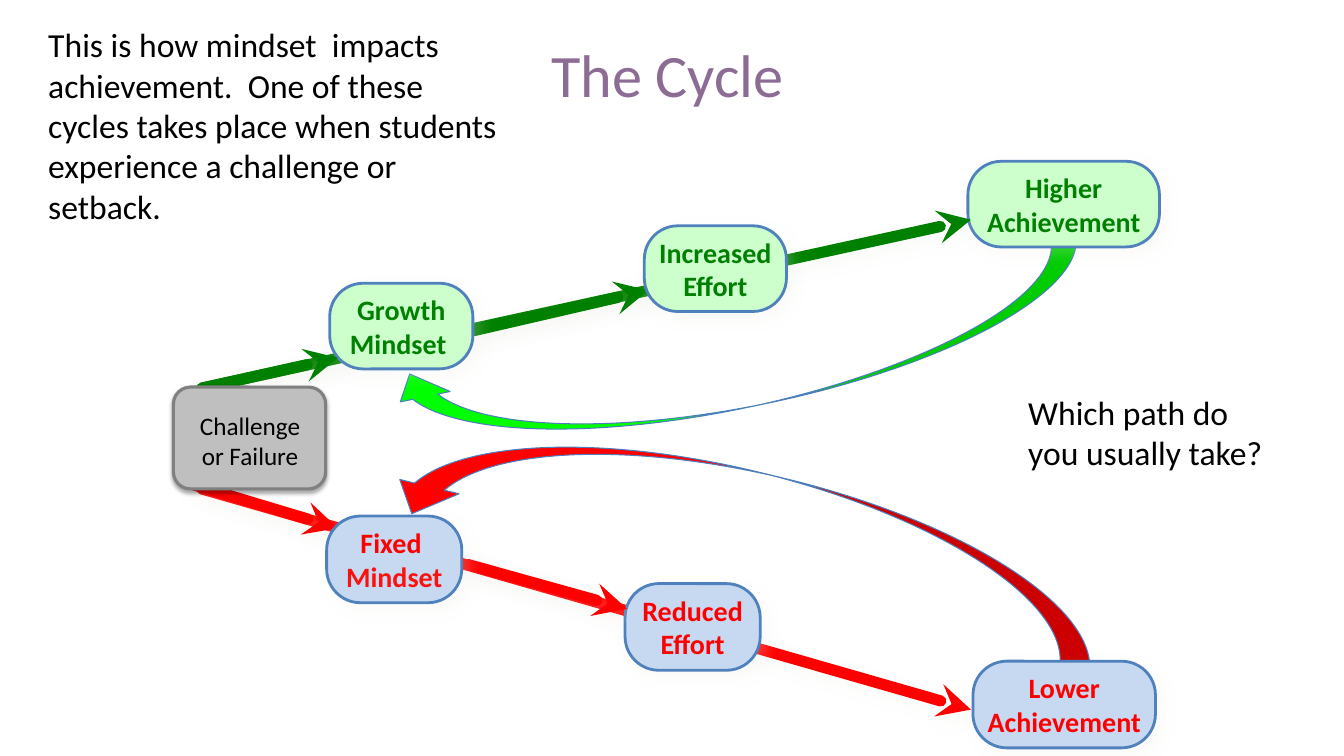
from lxml import etree
from pptx import Presentation
from pptx.dml.color import RGBColor
from pptx.enum.shapes import MSO_CONNECTOR, MSO_SHAPE
from pptx.enum.text import MSO_ANCHOR, PP_ALIGN
from pptx.oxml.ns import qn
from pptx.util import Inches, Pt

ROUND, RECT = MSO_SHAPE.ROUNDED_RECTANGLE, MSO_SHAPE.RECTANGLE
CURVE, LINE = MSO_SHAPE.CURVED_LEFT_ARROW, MSO_CONNECTOR.STRAIGHT
MIDDLE, TOP = MSO_ANCHOR.MIDDLE, MSO_ANCHOR.TOP
CENTER, LEFT = PP_ALIGN.CENTER, PP_ALIGN.LEFT

BLACK = RGBColor(0x00, 0x00, 0x00)
PURPLE = RGBColor(0x8C, 0x6C, 0x94)
RED = RGBColor(0xFF, 0x00, 0x00)
WARM = RGBColor(0xFB, 0x12, 0x0E)
GREEN = RGBColor(0x00, 0x80, 0x00)
LIME = RGBColor(0x00, 0xFF, 0x00)
MINT = RGBColor(0xCC, 0xFF, 0xCC)
SKY = RGBColor(0xC6, 0xD9, 0xF1)
BLUE = RGBColor(0x4F, 0x81, 0xBD)
STEEL = RGBColor(0x4B, 0x7E, 0xBC)
SILVER = RGBColor(0xBF, 0xBF, 0xBF)
GRAY = RGBColor(0x80, 0x80, 0x80)
CREAM = RGBColor(0xEE, 0xEC, 0xE1)
SOFT = (CREAM, 21, 10, 6, 45)


def shade(shape, color, alpha, blur, dist, angle):
    """Give the shape an outer shadow: alpha in percent, lengths in points."""
    effects = etree.SubElement(shape._element.spPr, qn("a:effectLst"))
    outer = etree.SubElement(effects, qn("a:outerShdw"), blurRad=str(Pt(blur)),
                             dist=str(Pt(dist)), dir=str(angle * 60000),
                             algn="ctr", rotWithShape="0")
    tint = etree.SubElement(outer, qn("a:srgbClr"), val=str(color))
    etree.SubElement(tint, qn("a:alpha"), val=str(alpha * 1000))


def write(shape, lines, size, align, anchor, bold=False):
    """Fill the shape with one paragraph for each (words, color) pair."""
    frame = shape.text_frame
    frame.word_wrap = True
    frame.vertical_anchor = anchor
    for i, (words, color) in enumerate(lines):
        para = frame.add_paragraph() if i else frame.paragraphs[0]
        para.alignment = align
        run = para.add_run()
        run.text = words
        run.font.name = "Calibri"
        run.font.size = Pt(size)
        run.font.bold = bold
        run.font.color.rgb = color


deck = Presentation()
deck.slide_width, deck.slide_height = Inches(13.33), Inches(7.5)
slide = deck.slides.add_slide(deck.slide_layouts[6])
shapes = slide.shapes

# Feedback arrows from achievement back to mindset
for x, y, w, h, turn, flip, color in [
    (6.83, 1.68, 1.21, 7.21, 283.6, True, RED),
    (6.84, 0.04, 1.01, 7, 78.2, False, LIME),
]:
    curve = shapes.add_shape(CURVE, Inches(x), Inches(y), Inches(w), Inches(h))
    curve.rotation = turn
    if flip:
        curve._element.spPr.xfrm.set("flipV", "1")
    curve.shadow.inherit = False
    curve.fill.solid()
    curve.fill.fore_color.rgb = color
    curve.line.color.rgb = STEEL
    curve.line.width = Pt(0.75)

# Steps and arrows from back to front; an arrow has no words,
# and its place is its two ends
steps = [
    ((2, 4.85, 9.63, 7.04), RED, None),
    ((1.89, 4.8, 3.35, 5.24), RED, None),
    ((6.2, 5.79, 1.34, 0.86), SKY, [("Reduced Effort", RED)]),
    ((9.65, 6.56, 1.81, 0.86), SKY, [("Lower Achievement", RED)]),
    ((9.6, 1.6, 1.9, 0.85), MINT, [("Higher Achievement", GREEN)]),
    ((2, 3.85, 9.63, 2.18), GREEN, None),
    ((4.7, 3.28, 6.43, 2.88), GREEN, None),
    ((3.27, 2.81, 1.42, 0.85), MINT, [("Growth Mindset ", GREEN)]),
    ((2.01, 3.85, 3.35, 3.55), GREEN, None),
    ((6.39, 2.24, 1.41, 0.85), MINT, [("Increased Effort", GREEN)]),
    ((4.64, 5.6, 6.22, 6.04), RED, None),
    ((3.24, 5.12, 1.34, 0.86), SKY, [("Fixed ", RED), ("Mindset", WARM)]),
]
for place, color, lines in steps:
    spot = [Inches(n) for n in place]
    if lines:
        step = shapes.add_shape(ROUND, *spot)
        step.adjustments[0] = 0.39
        step.fill.solid()
        step.fill.fore_color.rgb = color
        step.line.color.rgb = BLUE
        step.line.width = Pt(2)
        frame = step.text_frame
        frame.margin_left = frame.margin_right = Inches(0.04)
        frame.margin_top = frame.margin_bottom = Inches(0.04)
        write(step, lines, 20, CENTER, MIDDLE, True)
    else:
        step = shapes.add_connector(LINE, *spot)
        step.line.color.rgb = color
        step.line.width = Pt(8)
        stroke = step.line._get_or_add_ln()
        stroke.set("cap", "rnd")
        etree.SubElement(stroke, qn("a:round"))
        etree.SubElement(stroke, qn("a:tailEnd"), type="stealth")
    shade(step, *SOFT)

# Starting point
start = shapes.add_group_shape().shapes
plate = start.add_shape(ROUND, Inches(1.72), Inches(3.84), Inches(1.51), Inches(1.01))
plate.line.color.rgb = GRAY
plate.line.width = Pt(2.25)
label = start.add_shape(RECT, Inches(1.79), Inches(4.02), Inches(1.38), Inches(0.71))
label.line.fill.background()
label.shadow.inherit = False
for part in (plate, label):
    part.fill.solid()
    part.fill.fore_color.rgb = SILVER
shade(plate, BLACK, 35, 3.1, 1.8, 90)
write(label, [("Challenge or Failure", BLACK)], 18, CENTER, TOP)

# Title and remarks
for place, words, size, color, align, anchor in [
    ((2.12, 0.1, 9, 1.25), "The Cycle", 43, PURPLE, CENTER, MIDDLE),
    ((0.38, 0.19, 4.68, 2.12),
     "This is how mindset  impacts achievement.  One of these cycles takes "
     "place when students experience a challenge or setback.",
     24, BLACK, LEFT, TOP),
    ((10.1, 3.84, 2.7, 0.91), "Which path do you usually take?",
     24, BLACK, LEFT, TOP),
]:
    note = shapes.add_textbox(*[Inches(n) for n in place])
    write(note, [(words, color)], size, align, anchor)

deck.save("out.pptx")
